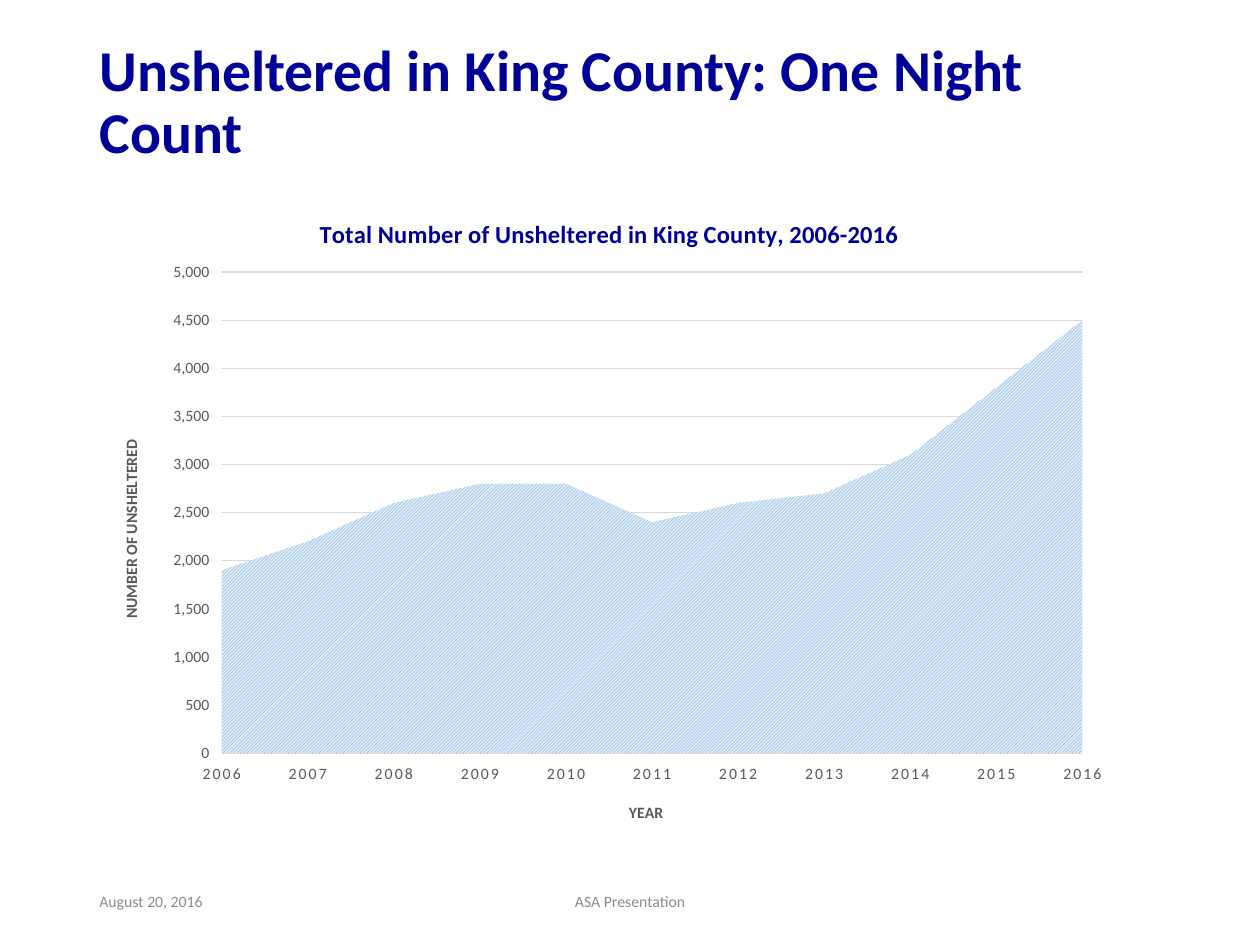
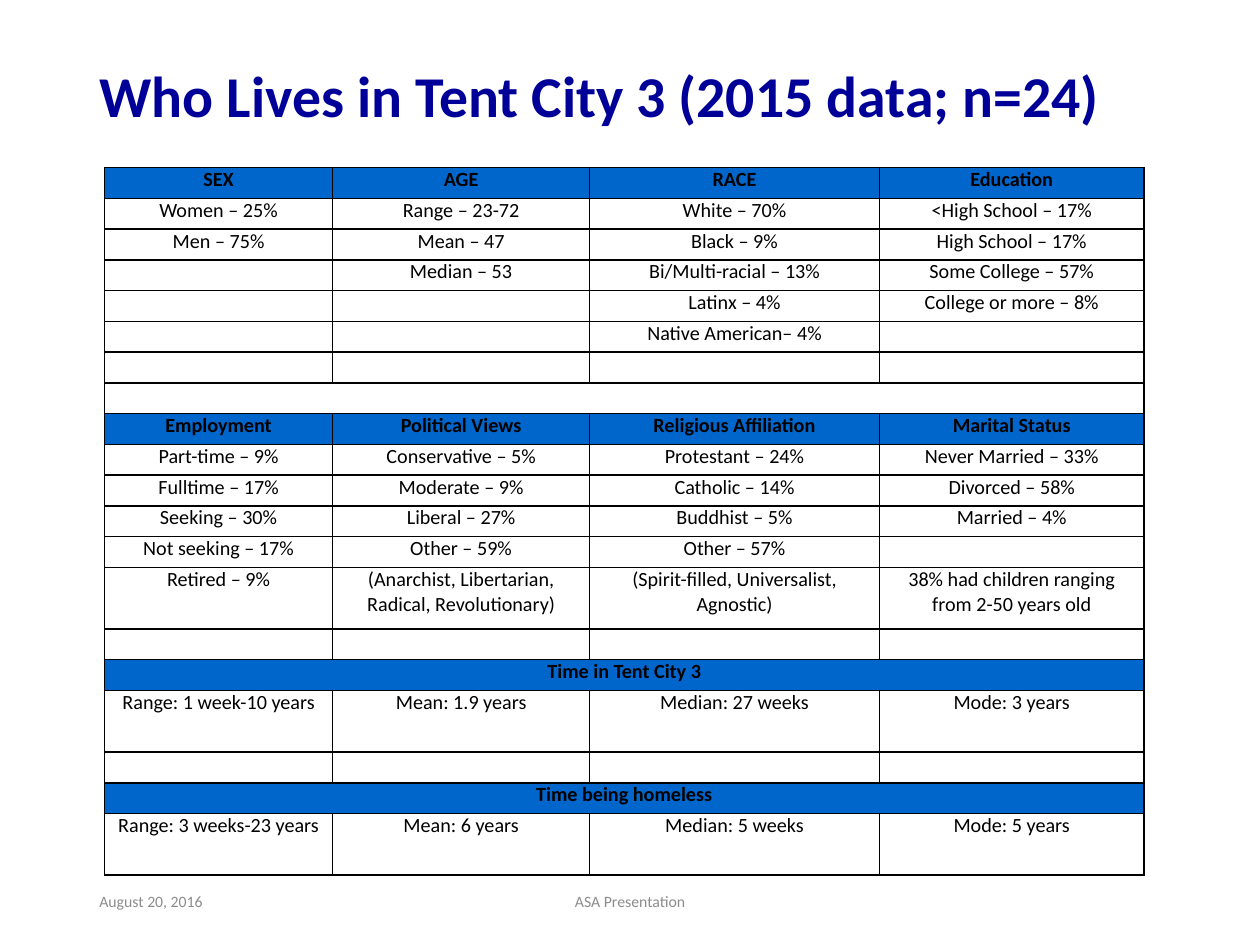
from lxml import etree
from pptx import Presentation
from pptx.chart.data import CategoryChartData
from pptx.dml.color import RGBColor
from pptx.enum import chart as kinds, dml, text
from pptx.oxml.ns import qn
from pptx.util import Inches, Pt

HUES = {"title": "000099", "foot": "8C8C8C", "ink": "000000", "head": "0066CC",
        "axis": "595959", "grid": "D9D9D9", "line": "5B9BD5", "pale": "DEEBF7"}
FONT = "Calibri"
LEFT, MID = text.PP_ALIGN.LEFT, text.PP_ALIGN.CENTER
COUNTS = {"2006": 1900, "2007": 2200, "2008": 2600, "2009": 2800, "2010": 2800,
          "2011": 2400, "2012": 2600, "2013": 2700, "2014": 3100, "2015": 3800,
          "2016": 4500}
HEADS = {0, 8, 15, 18}
SPANS = {7, 15, 18}
TALL = {13, 16, 19}
BLANK = [""] * 4
PEOPLE = [
    ["SEX", "AGE", "RACE", "Education"],
    ["Women – 25%", "Range – 23-72", "White – 70%", "<High School – 17%"],
    ["Men – 75%", "Mean – 47", "Black – 9%", "High School – 17%"],
    ["", "Median – 53", "Bi/Multi-racial – 13%", "Some College – 57%"],
    ["", "", "Latinx – 4%", "College or more – 8%"],
    ["", "", "Native American– 4%", ""],
    BLANK,
    BLANK,
    ["Employment", "Political Views", "Religious Affiliation", "Marital Status"],
    ["Part-time – 9%", "Conservative – 5%", "Protestant – 24%", "Never Married – 33%"],
    ["Fulltime – 17%", "Moderate – 9%", "Catholic – 14%", "Divorced – 58%"],
    ["Seeking – 30%", "Liberal – 27%", "Buddhist – 5%", "Married – 4%"],
    ["Not seeking – 17%", "Other – 59%", "Other – 57%", ""],
    ["Retired – 9%", "(Anarchist, Libertarian, Radical, Revolutionary)",
     "(Spirit-filled, Universalist, Agnostic)",
     "38% had children ranging from 2-50 years old"],
    BLANK,
    ["Time in Tent City 3", "", "", ""],
    ["Range: 1 week-10 years", "Mean: 1.9 years", "Median: 27 weeks", "Mode: 3 years"],
    BLANK,
    ["Time being homeless", "", "", ""],
    ["Range: 3 weeks-23 years", "Mean: 6 years", "Median: 5 weeks", "Mode: 5 years"],
]


def hue(name):
    return RGBColor.from_string(HUES[name])


def style(font, size, color, bold=False):
    font.name, font.size, font.bold = FONT, Pt(size), bold
    font.color.rgb = hue(color)


def write(frame, words, size=9, color="ink", bold=False, align=None, lead=None):
    para = frame.paragraphs[0]
    para.alignment, para.line_spacing = align, lead
    run = para.add_run()
    run.text = words
    style(run.font, size, color, bold)


def set_title(slide, words, box):
    title = slide.shapes.title
    title.left, title.top, title.width, title.height = map(Inches, box)
    frame = title.text_frame
    frame.auto_size = text.MSO_AUTO_SIZE.NONE
    frame.vertical_anchor = text.MSO_ANCHOR.MIDDLE
    write(frame, words, size=33, color="title", bold=True, align=LEFT, lead=0.9)


def add_foot(slide, top=6.95, high=0.4):
    for words, left, wide, align in (("August 20, 2016", 0.69, 2.25, LEFT),
                                     ("ASA Presentation", 3.31, 3.38, MID)):
        frame = slide.shapes.add_textbox(*map(Inches, (left, top, wide, high))).text_frame
        frame.word_wrap = True
        frame.vertical_anchor = text.MSO_ANCHOR.MIDDLE
        write(frame, words, color="foot", align=align)


def add_page(deck, words, box):
    slide = deck.slides.add_slide(deck.slide_layouts[5])
    set_title(slide, words, box)
    add_foot(slide)
    return slide


def place(node, slot, **spots):
    for old in node.findall(qn("c:layout")):
        node.remove(old)
    layout = etree.Element(qn("c:layout"))
    manual = etree.SubElement(layout, qn("c:manualLayout"))
    for key, val in spots.items():
        etree.SubElement(manual, qn(f"c:{key}")).set("val", str(val))
    node.insert(slot, layout)


def label(title, words, x, y, size=9, color="axis"):
    write(title.text_frame, words, size=size, color=color, bold=True)
    place(title._element, 1, xMode="edge", yMode="edge", x=x, y=y)


def add_area(slide, box):
    data = CategoryChartData(number_format="#,##0")
    data.categories = list(COUNTS)
    data.add_series("Series 1", list(COUNTS.values()))
    chart = slide.shapes.add_chart(kinds.XL_CHART_TYPE.AREA_STACKED,
                                   *map(Inches, box), data).chart
    style(chart.font, 10, "ink")
    chart.has_legend = False
    label(chart.chart_title, "Total Number of Unsheltered in King County, 2006-2016",
          0.22, 0.04, size=14, color="title")
    years, scale = chart.category_axis, chart.value_axis
    label(years.axis_title, "YEAR", 0.52, 0.93)
    label(scale.axis_title, "NUMBER OF UNSHELTERED", 0.03, 0.38)
    turn = scale.axis_title.text_frame._txBody.find(qn("a:bodyPr"))
    turn.set("rot", "-5400000")
    turn.set("vert", "horz")
    for axis in (years, scale):
        style(axis.tick_labels.font, 9, "axis")
        axis.format.line.fill.background()
    for props in years._element.find(qn("c:txPr")).iter(qn("a:defRPr")):
        props.set("spc", "120")
    years.has_major_gridlines = False
    scale.minimum_scale, scale.maximum_scale, scale.major_unit = 0, 5000, 500
    scale.tick_labels.number_format = "#,##0"
    scale.tick_labels.number_format_is_linked = False
    scale._element.find(qn("c:crossBetween")).set("val", "midCat")
    scale.has_major_gridlines = True
    grid = scale.major_gridlines.format.line
    grid.width = Pt(0.75)
    grid.color.rgb = hue("grid")
    plot = chart.plots[0]
    plot.vary_by_categories = False
    fill = plot.series[0].format.fill
    fill.patterned()
    fill.pattern = dml.MSO_PATTERN.LIGHT_UPWARD_DIAGONAL
    fill.fore_color.rgb, fill.back_color.rgb = hue("line"), hue("pale")
    place(chart._chartSpace.find(".//" + qn("c:plotArea")), 0, layoutTarget="inner",
          xMode="edge", yMode="edge", x=0.13, y=0.13, w=0.83, h=0.73)


def rule(cell):
    props = cell._tc.get_or_add_tcPr()
    for slot, side in enumerate("LRTB"):
        line = etree.Element(qn(f"a:ln{side}"), w=str(Pt(1)))
        fill = etree.SubElement(line, qn("a:solidFill"))
        etree.SubElement(fill, qn("a:srgbClr"), val=HUES["ink"])
        props.insert(slot, line)


def fill_cell(cell, words, head):
    cell.margin_left = cell.margin_right = Inches(0.07)
    cell.margin_top = cell.margin_bottom = 0
    if head:
        cell.fill.solid()
        cell.fill.fore_color.rgb = hue("head")
    else:
        cell.fill.background()
    rule(cell)
    if words:
        write(cell.text_frame, words, size=11.5, bold=head, align=MID)
    else:
        para = cell.text_frame.paragraphs[0]._p
        etree.SubElement(para, qn("a:endParaRPr"), sz="1150")


def add_grid(slide, box):
    table = slide.shapes.add_table(len(PEOPLE), 4, *map(Inches, box)).table
    table.first_row = table.horz_banding = False
    for col, wide in zip(table.columns, (1.81, 2.04, 2.3, 2.1)):
        col.width = Inches(wide)
    unit = box[3] / (len(PEOPLE) + len(TALL))
    for r, row in enumerate(PEOPLE):
        table.rows[r].height = Inches(unit * (2 if r in TALL else 1))
        for c, words in enumerate(row):
            fill_cell(table.cell(r, c), words, r in HEADS)
        if r in SPANS:
            table.cell(r, 0).merge(table.cell(r, 3))


def main():
    deck = Presentation()
    deck.slide_width, deck.slide_height = Inches(10), Inches(7.5)
    count = add_page(deck, "Unsheltered in King County: One Night Count",
                     (0.69, 0.4, 8.62, 0.85))
    add_area(count, (0.69, 1.48, 8.23, 5.23))
    people = add_page(deck, "Who Lives in Tent City 3 (2015 data; n=24)",
                      (0.69, 0.4, 8.62, 0.77))
    add_grid(people, (0.83, 1.33, 8.25, 5.62))
    deck.save("out.pptx")


if __name__ == "__main__":
    main()
